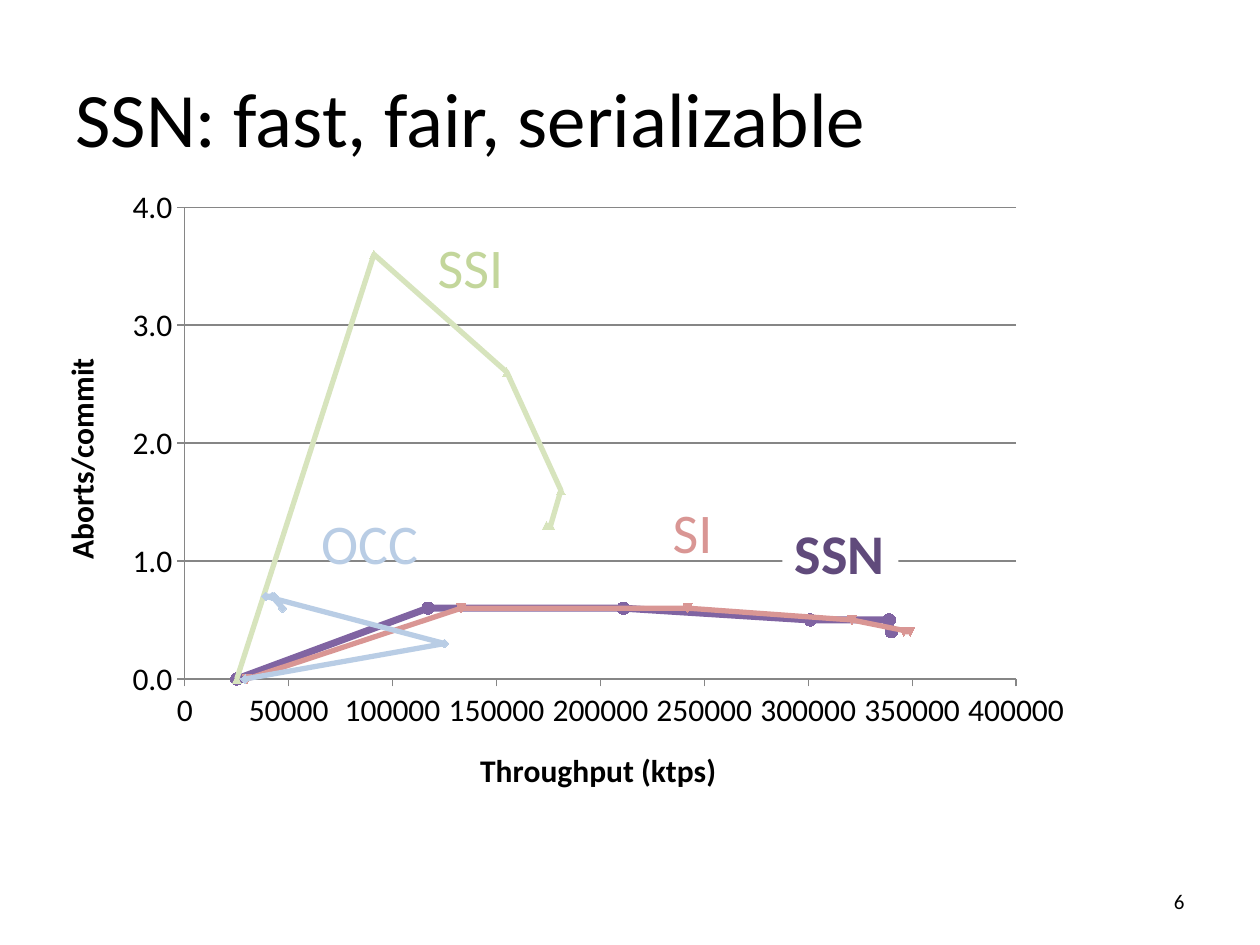
from pptx import Presentation, util as u
from pptx.chart.data import XyChartData
from pptx.dml.color import RGBColor
from pptx.enum import chart as charts, shapes, text
from pptx.oxml import parse_xml

FONT = "Calibri"
BLACK = RGBColor(0x00, 0x00, 0x00)
WHITE = RGBColor(0xFF, 0xFF, 0xFF)
GREY = RGBColor(0x86, 0x86, 0x86)
BLUE = RGBColor(0xB9, 0xCD, 0xE5)
RED = RGBColor(0xD9, 0x96, 0x94)
LIME = RGBColor(0xD7, 0xE4, 0xBD)
GREEN = RGBColor(0xC3, 0xD6, 0x9B)
PURPLE = RGBColor(0x80, 0x64, 0xA2)
VIOLET = RGBColor(0x60, 0x4A, 0x7B)

TITLE = "SSN: fast, fair, serializable"
TITLE_AREA = (5, 4, 90, 16.67)
CHART_AREA = (1.2, 17.87, 85.8, 71.33)
NUMBER_AREA = (71.7, 92.67, 23.3, 5.33)
PLOT_AREA = {"x": 0.157, "y": 0.057, "w": 0.769, "h": 0.7}

DIAMOND = charts.XL_MARKER_STYLE.DIAMOND
AUTOMATIC = charts.XL_MARKER_STYLE.AUTOMATIC
CIRCLE = charts.XL_MARKER_STYLE.CIRCLE
SERIES = [
    ("OCC", BLUE, BLUE, 3, AUTOMATIC, 5, [
        (29000, 0), (125000, 0.3), (39000, 0.7), (43000, 0.7), (47000, 0.6), (42000, 0.7)]),
    ("SI", RED, RED, 3, AUTOMATIC, 5, [
        (30000, 0), (133000, 0.6), (242000, 0.6), (321000, 0.5), (349000, 0.4), (346000, 0.4)]),
    ("SSI", LIME, GREEN, 3, AUTOMATIC, 5, [
        (25000, 0), (91000, 3.6), (155000, 2.6), (181000, 1.6), (176000, 1.3), (174000, 1.3)]),
    ("SSN", PURPLE, PURPLE, 4, CIRCLE, 7, [
        (25000, 0), (117000, 0.6), (211000, 0.6), (301000, 0.5), (339000, 0.5), (340000, 0.4)]),
]
LABELS = [
    ("OCC", BLUE, (24.5, 53.27, 9.8, 9.2)),
    ("SI", RED, (52.4, 52.13, 5.2, 9.2)),
    ("SSI", GREEN, (33.75, 24.07, 7.3, 9.2)),
    ("SSN", VIOLET, (62.1, 54.33, 9.2, 9.2)),
]

deck = Presentation()
deck.slide_width, deck.slide_height = u.Inches(10), u.Inches(7.5)
page = deck.slides.add_slide(deck.slide_layouts[5])


def area(shares):
    sides = (deck.slide_width, deck.slide_height) * 2
    return [int(side * share / 100) for side, share in zip(sides, shares)]


def style(font, size, color=BLACK, bold=False):
    font.name, font.size, font.bold = FONT, u.Pt(size), bold
    font.color.rgb = color


def write(box, words, size, color=BLACK, bold=False, align=text.PP_ALIGN.LEFT):
    frame = box.text_frame
    frame.text = words
    frame.vertical_anchor = text.MSO_ANCHOR.MIDDLE
    para = frame.paragraphs[0]
    para.alignment = align
    style(para.runs[0].font, size, color, bold)
    return frame


def add_label(words, color, shares):
    bold = words == "SSN"
    if bold:
        box = page.shapes.add_shape(shapes.MSO_SHAPE.RECTANGLE, *area(shares))
        box.shadow.inherit = False
        box.fill.solid()
        box.fill.fore_color.rgb = WHITE
        box.line.fill.background()
    else:
        box = page.shapes.add_textbox(*area(shares))
    frame = write(box, words, 32, color, bold)
    frame.vertical_anchor = text.MSO_ANCHOR.TOP
    frame.word_wrap = False
    frame.auto_size = text.MSO_AUTO_SIZE.SHAPE_TO_FIT_TEXT
    frame.margin_left = frame.margin_right = u.Inches(0.1)
    frame.margin_top = frame.margin_bottom = u.Inches(0.1)
    frame.paragraphs[0].line_spacing = 0.9


def format_axis(axis, title, top, step, number_format):
    axis.minimum_scale, axis.maximum_scale, axis.major_unit = 0, top, step
    axis.major_tick_mark = charts.XL_TICK_MARK.OUTSIDE
    axis.minor_tick_mark = charts.XL_TICK_MARK.NONE
    axis.tick_labels.number_format = number_format
    axis.tick_labels.number_format_is_linked = False
    style(axis.tick_labels.font, 18)
    axis.format.line.color.rgb = GREY
    axis.axis_title.text_frame.text = title
    style(axis.axis_title.text_frame.paragraphs[0].runs[0].font, 18, bold=True)


def place_plot(chart):
    plot_area = chart.plots[0]._element.getparent()
    for old in plot_area.findall("{*}layout"):
        plot_area.remove(old)
    modes = '<c:layoutTarget val="inner"/><c:xMode val="edge"/><c:yMode val="edge"/>'
    sizes = "".join(f'<c:{side} val="{share}"/>' for side, share in PLOT_AREA.items())
    plot_area.insert(0, parse_xml(
        '<c:layout xmlns:c="http://schemas.openxmlformats.org/drawingml/2006/chart">'
        f"<c:manualLayout>{modes}{sizes}</c:manualLayout></c:layout>"))


def add_abort_chart():
    data = XyChartData()
    for name, *_, points in SERIES:
        series = data.add_series(name)
        for x, y in points:
            series.add_data_point(x, y)
    chart = page.shapes.add_chart(
        charts.XL_CHART_TYPE.XY_SCATTER_LINES, *area(CHART_AREA), data).chart
    chart.has_legend = chart.has_title = False
    style(chart.font, 18)
    chart.plots[0].vary_by_categories = False
    format_axis(chart.category_axis, "Throughput (ktps)", 400000, 50000, "General")
    format_axis(chart.value_axis, "Aborts/commit", 4, 1, "#,##0.0")
    chart.category_axis.has_major_gridlines = False
    chart.value_axis.has_major_gridlines = True
    chart.value_axis.major_gridlines.format.line.color.rgb = GREY
    for series, row in zip(chart.plots[0].series, SERIES):
        _, color, dot, width, symbol, size, _ = row
        series.smooth = False
        series.format.line.color.rgb = color
        series.format.line.width = u.Pt(width)
        marker = series.marker
        marker.style, marker.size = symbol, size
        marker.format.fill.solid()
        marker.format.fill.fore_color.rgb = dot
        marker.format.line.color.rgb = dot
    place_plot(chart)


title = page.shapes.title
title.left, title.top, title.width, title.height = area(TITLE_AREA)
write(title, TITLE, 44)
add_abort_chart()
write(page.shapes.add_textbox(*area(NUMBER_AREA)), "6", 12, align=text.PP_ALIGN.RIGHT)
for label in LABELS:
    add_label(*label)

deck.save("out.pptx")
